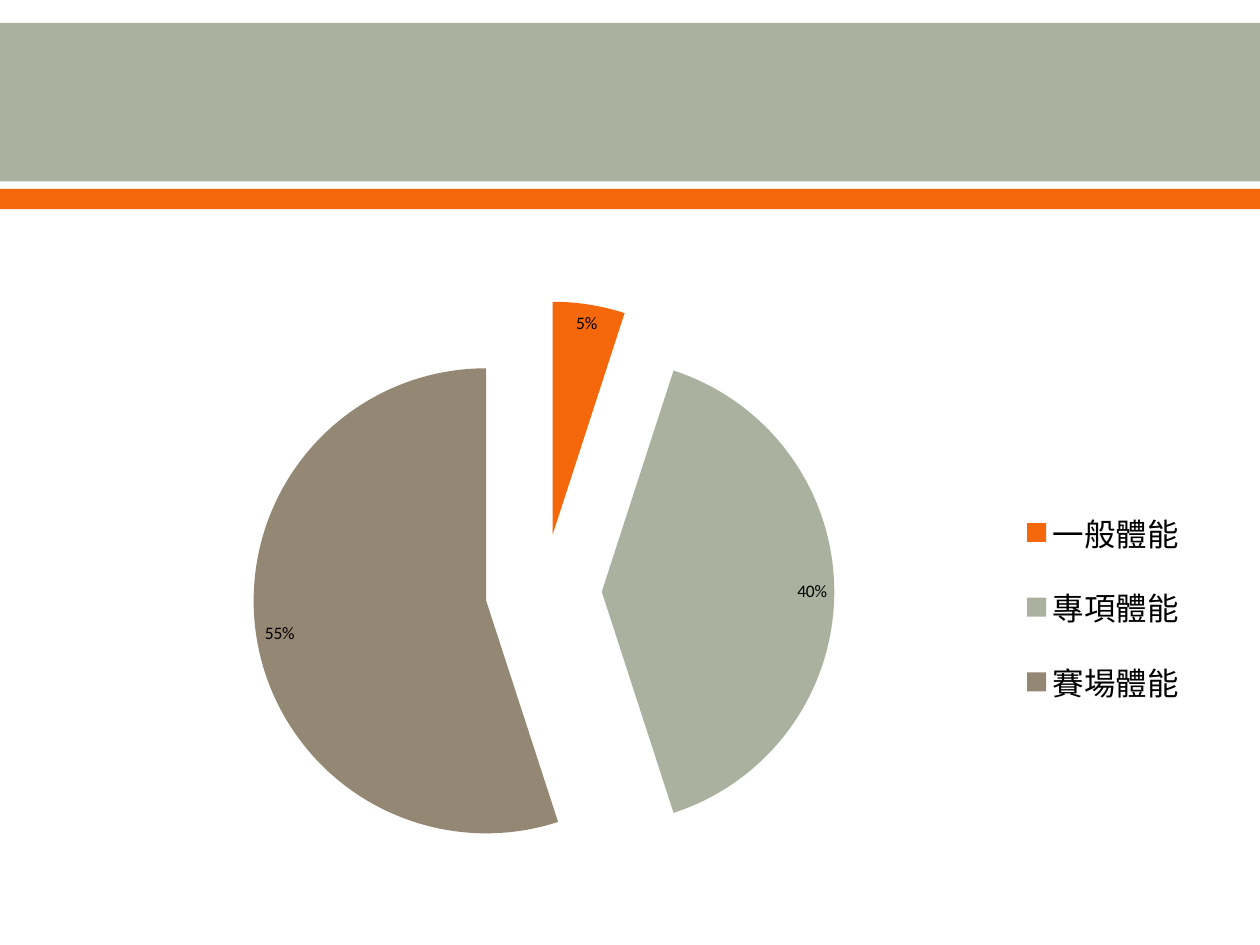
from lxml import etree
from pptx import Presentation
from pptx.chart.data import CategoryChartData
from pptx.dml.color import RGBColor
from pptx.enum.chart import XL_CHART_TYPE, XL_LABEL_POSITION, XL_LEGEND_POSITION
from pptx.enum.shapes import MSO_SHAPE
from pptx.oxml.ns import qn
from pptx.util import Cm, Pt

PIE = XL_CHART_TYPE.PIE
BEST_FIT = XL_LABEL_POSITION.BEST_FIT
LEGEND_RIGHT = XL_LEGEND_POSITION.RIGHT
RECTANGLE = MSO_SHAPE.RECTANGLE

THEME = {
    "white": "FFFFFF", "sage": "ABB19F", "orange": "F4680B",
    "taupe": "948774", "text": "000000",
    "font": "Calibri", "label_size": 10, "legend_size": 18,
}
SLIDE_SIZE = (25.4, 19.05)
BANDS = [("white", 0.28, 4.04), ("sage", 0.46, 3.2), ("orange", 3.81, 0.41)]
FITNESS_SHARES = [
    ("一般體能", 0.05, "orange"),
    ("專項體能", 0.4, "sage"),
    ("賽場體能", 0.55, "taupe"),
]
CHART_BOX = (1.3, 5.72, 23.01, 12.42)
LEGEND_LAYOUT = {"xMode": "edge", "yMode": "edge", "x": 0.83, "y": 0.32, "w": 0.16, "h": 0.41}
EXPLOSION = 25


def color(name):
    return RGBColor.from_string(THEME[name])


def paint(fill, name):
    fill.solid()
    fill.fore_color.rgb = color(name)


def set_font(font, size):
    font.name = THEME["font"]
    font.size = Pt(THEME[size])
    font.color.rgb = color("text")


def add_band(page, name, top, height):
    band = page.shapes.add_shape(RECTANGLE, 0, Cm(top), Cm(SLIDE_SIZE[0]), Cm(height))
    band.shadow.inherit = False
    paint(band.fill, name)
    band.line.fill.background()


def explode(series):
    explosion = etree.Element(qn("c:explosion"), val=str(EXPLOSION))
    series._element.find(qn("c:tx")).addnext(explosion)


def place_legend(legend):
    position = legend._element.find(qn("c:legendPos"))
    for old in legend._element.findall(qn("c:layout")):
        legend._element.remove(old)
    layout = etree.Element(qn("c:layout"))
    manual = etree.SubElement(layout, qn("c:manualLayout"))
    for key, value in LEGEND_LAYOUT.items():
        etree.SubElement(manual, qn(f"c:{key}"), val=str(value))
    position.addnext(layout)


def add_pie(page):
    data = CategoryChartData(number_format="0%")
    data.categories = [name for name, _, _ in FITNESS_SHARES]
    data.add_series("Series 1", [share for _, share, _ in FITNESS_SHARES])
    chart = page.shapes.add_chart(PIE, *map(Cm, CHART_BOX), data).chart
    chart.has_title = False
    set_font(chart.font, "label_size")

    plot = chart.plots[0]
    plot.vary_by_categories = True
    series = plot.series[0]
    for index, (_, _, shade) in enumerate(FITNESS_SHARES):
        paint(series.points[index].format.fill, shade)
    explode(series)

    labels = series.data_labels
    labels.show_value = True
    labels.number_format = "0%"
    labels.number_format_is_linked = False
    labels.position = BEST_FIT
    set_font(labels.font, "label_size")

    chart.has_legend = True
    chart.legend.position = LEGEND_RIGHT
    chart.legend.include_in_layout = False
    set_font(chart.legend.font, "legend_size")
    place_legend(chart.legend)


def main():
    deck = Presentation()
    deck.slide_width, deck.slide_height = map(Cm, SLIDE_SIZE)
    page = deck.slides.add_slide(deck.slide_layouts[6])
    paint(page.background.fill, "white")
    for band in BANDS:
        add_band(page, *band)
    add_pie(page)
    deck.save("out.pptx")


if __name__ == "__main__":
    main()
